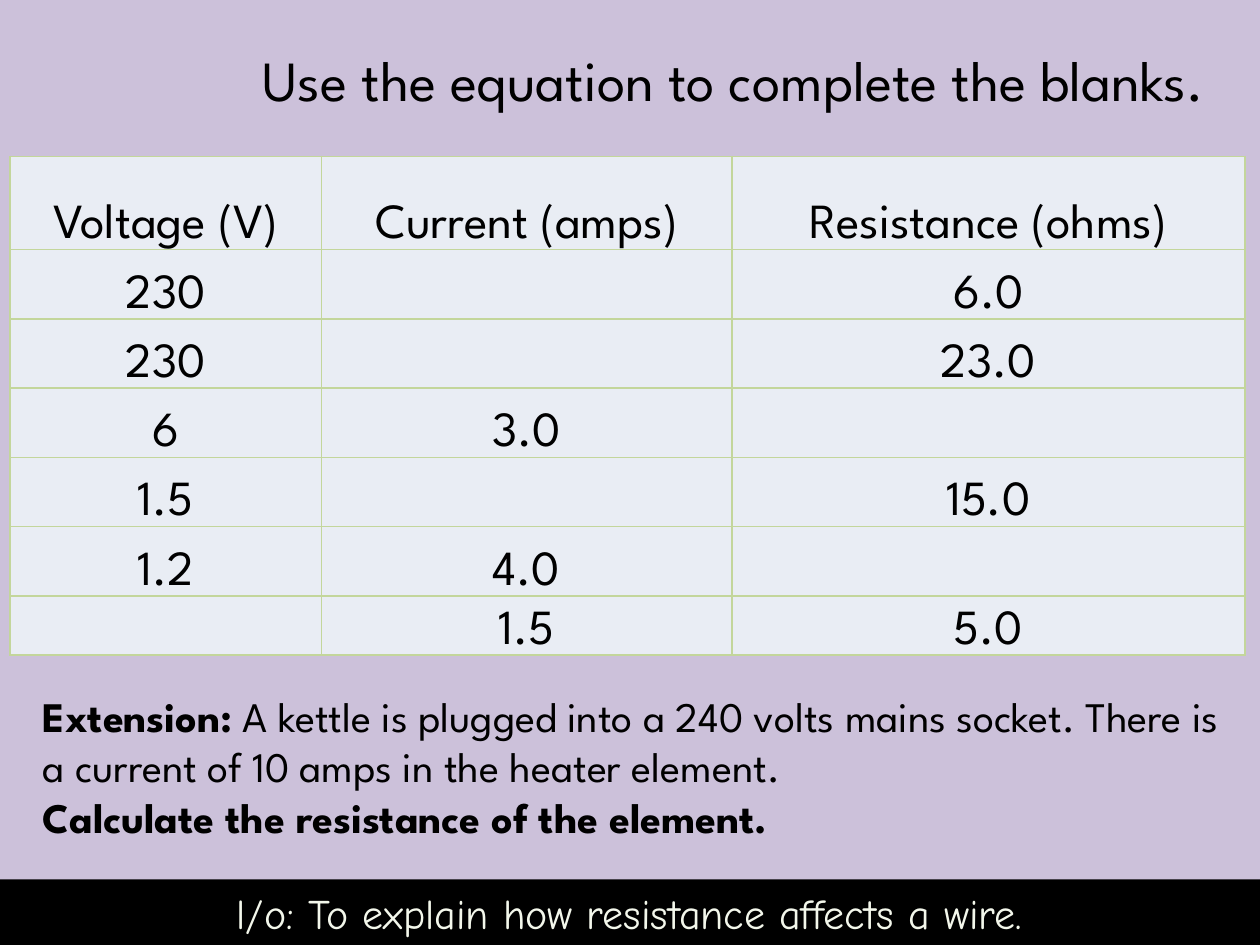
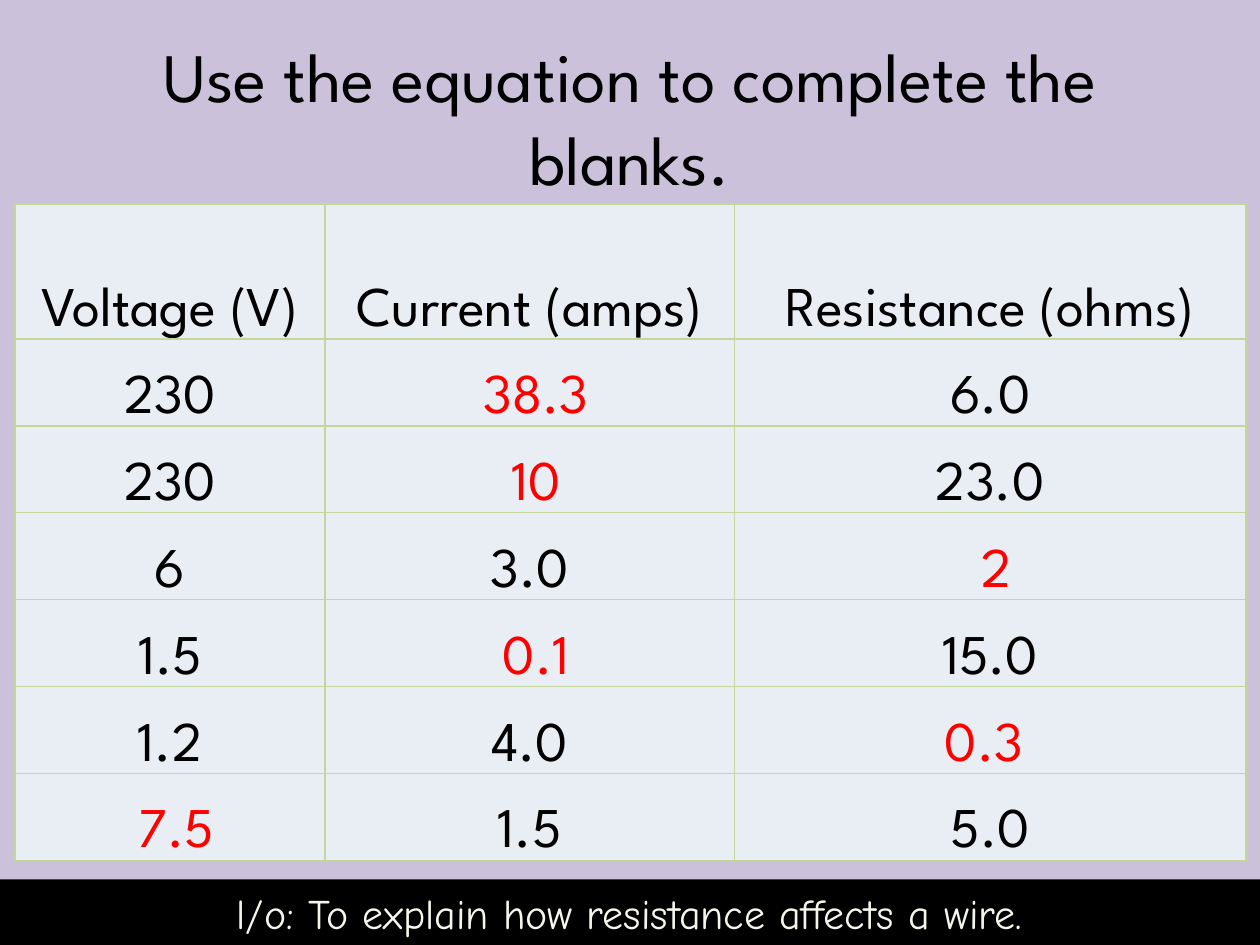
from dataclasses import dataclass

from lxml import etree
from pptx import Presentation
from pptx.dml.color import RGBColor
from pptx.enum.shapes import MSO_SHAPE
from pptx.enum.text import MSO_ANCHOR, MSO_AUTO_SIZE, PP_ALIGN
from pptx.oxml.ns import qn
from pptx.util import Inches, Pt

RECTANGLE = MSO_SHAPE.RECTANGLE
MIDDLE, BOTTOM = MSO_ANCHOR.MIDDLE, MSO_ANCHOR.BOTTOM
NO_FIT, GROW = MSO_AUTO_SIZE.NONE, MSO_AUTO_SIZE.SHAPE_TO_FIT_TEXT
LEFT, CENTER = PP_ALIGN.LEFT, PP_ALIGN.CENTER
TITLE_ONLY = 5


@dataclass(frozen=True)
class Theme:
    """Colours, fonts and type sizes shared by the slides."""
    background: str = "CCC1DA"
    cell: str = "E9EDF4"
    border: str = "C3D69B"
    ink: str = "000000"
    answer: str = "FF0000"
    band_text: str = "F3F7EB"
    font: str = "League Spartan"
    band_font: str = "Comic Neue"
    body_size: float = 24
    border_width: float = 1


THEME = Theme()
TITLE = "Use the equation to complete the blanks."
OBJECTIVE = "l/o: To explain how resistance affects a wire."
HEADINGS = ["Voltage (V)", "Current (amps)", "Resistance (ohms)"]
QUESTIONS = [
    ["230", None, "6.0"],
    ["230", None, "23.0"],
    ["6", "3.0", None],
    ["1.5", None, "15.0"],
    ["1.2", "4.0", None],
    [None, "1.5", "5.0"],
]
ANSWERS = [
    ("38.3", "margin_left"),
    ("10", "margin_left"),
    ("2", "margin_left"),
    ("0.1", "margin_left"),
    ("0.3", "margin_right"),
    ("7.5", "margin_left"),
]
EXTENSION = [
    [("Extension:", True),
     (" A kettle is plugged into a 240 volts mains socket. There is a current "
      "of 10 amps in the heater element.", False)],
    [("Calculate the resistance of the element.", True)],
]


def apply(target, values):
    """Set each named attribute on the target."""
    for name, value in values.items():
        setattr(target, name, value)


def paint(fill, color):
    """Give a fill one solid colour."""
    fill.solid()
    fill.fore_color.rgb = RGBColor.from_string(color)


def add_span(para, text, size, color=THEME.ink, font=THEME.font, bold=False):
    """Append formatted text to a paragraph."""
    span = para.add_run()
    span.text = text
    apply(span.font, {"size": Pt(size), "name": font, "bold": bold})
    span.font.color.rgb = RGBColor.from_string(color)


def place(shape, area):
    """Move and size a shape from a tuple of inches."""
    apply(shape, dict(zip(("left", "top", "width", "height"), map(Inches, area))))


def add_page(deck, title_area, title_size):
    """Add a slide with the shared background and title."""
    page = deck.slides.add_slide(deck.slide_layouts[TITLE_ONLY])
    paint(page.background.fill, THEME.background)
    title = page.shapes.title
    place(title, title_area)
    apply(title.text_frame, {"auto_size": NO_FIT, "vertical_anchor": MIDDLE, "word_wrap": True})
    para = title.text_frame.paragraphs[0]
    para.alignment = CENTER
    add_span(para, TITLE, title_size)
    return page


def add_objective_band(page):
    """Add the black band that carries the lesson objective."""
    band = page.shapes.add_shape(RECTANGLE, *map(Inches, (-1.67, 6.98, 13.33, 0.53)))
    band.shadow.inherit = False
    paint(band.fill, THEME.ink)
    band.line.fill.background()
    apply(band.text_frame, {"vertical_anchor": MIDDLE, "word_wrap": True})
    para = band.text_frame.paragraphs[0]
    para.alignment = CENTER
    add_span(para, OBJECTIVE, THEME.body_size, THEME.band_text, THEME.band_font)


def add_borders(cell):
    """Draw the four borders of a table cell."""
    properties = cell._tc.get_or_add_tcPr()
    for position, side in enumerate("LRTB"):
        line = etree.Element(qn(f"a:ln{side}"), w=str(Pt(THEME.border_width)))
        fill = etree.SubElement(line, qn("a:solidFill"))
        etree.SubElement(fill, qn("a:srgbClr"), val=THEME.border)
        properties.insert(position, line)


def fill_cell(cell, text, size, color=THEME.ink, shifted_margin=None):
    """Format a table cell and write its text, if any."""
    margins = {"margin_left": 0.07, "margin_right": 0.07, "margin_top": 0, "margin_bottom": 0}
    if shifted_margin:
        margins[shifted_margin] += 0.1
    apply(cell, {name: Inches(value) for name, value in margins.items()})
    cell.vertical_anchor = BOTTOM
    paint(cell.fill, THEME.cell)
    add_borders(cell)
    para = cell.text_frame.paragraphs[0]
    para.alignment = CENTER
    if text:
        add_span(para, text, size, color)


def add_circuit_table(page, corner, widths, heights, size, answers=None):
    """Add the voltage, current and resistance table, with answers if given."""
    area = (*corner, sum(widths), sum(heights))
    rows = [HEADINGS, *QUESTIONS]
    frame = page.shapes.add_table(len(rows), len(HEADINGS), *map(Inches, area))
    table = frame.table
    apply(table, {"first_row": False, "horz_banding": False})
    for column, width in zip(table.columns, widths):
        column.width = Inches(width)
    for row, height in zip(table.rows, heights):
        row.height = Inches(height)
    for row_index, row in enumerate(rows):
        for column_index, text in enumerate(row):
            cell = table.cell(row_index, column_index)
            if text is None and answers:
                answer, margin = answers[row_index - 1]
                fill_cell(cell, answer, size, THEME.answer, margin)
            else:
                fill_cell(cell, text, size)


def add_extension(page):
    """Add the extension task below the table."""
    box = page.shapes.add_textbox(*map(Inches, (0.24, 5.43, 9.64, 1.31)))
    apply(box.text_frame, {"word_wrap": True, "auto_size": GROW})
    for index, spans in enumerate(EXTENSION):
        para = box.text_frame.add_paragraph() if index else box.text_frame.paragraphs[0]
        para.alignment = LEFT
        for text, bold in spans:
            add_span(para, text, THEME.body_size, bold=bold)


def main():
    """Build the question slide and the answer slide."""
    deck = Presentation()
    apply(deck, {"slide_width": Inches(10), "slide_height": Inches(7.5)})

    page = add_page(deck, (1.36, 0, 8.93, 1.25), 32.4)
    add_circuit_table(page, (0.08, 1.24), (2.47, 3.26, 4.07), [0.74] + [0.55] * 5 + [0.47], 28)
    add_objective_band(page)
    add_extension(page)

    page = add_page(deck, (0.5, 0.3, 9, 1.25), 39.6)
    add_circuit_table(page, (0.12, 1.62), (2.46, 3.25, 4.06), [1.07] + [0.69] * 6, 32, ANSWERS)
    add_objective_band(page)

    deck.save("out.pptx")


if __name__ == "__main__":
    main()
